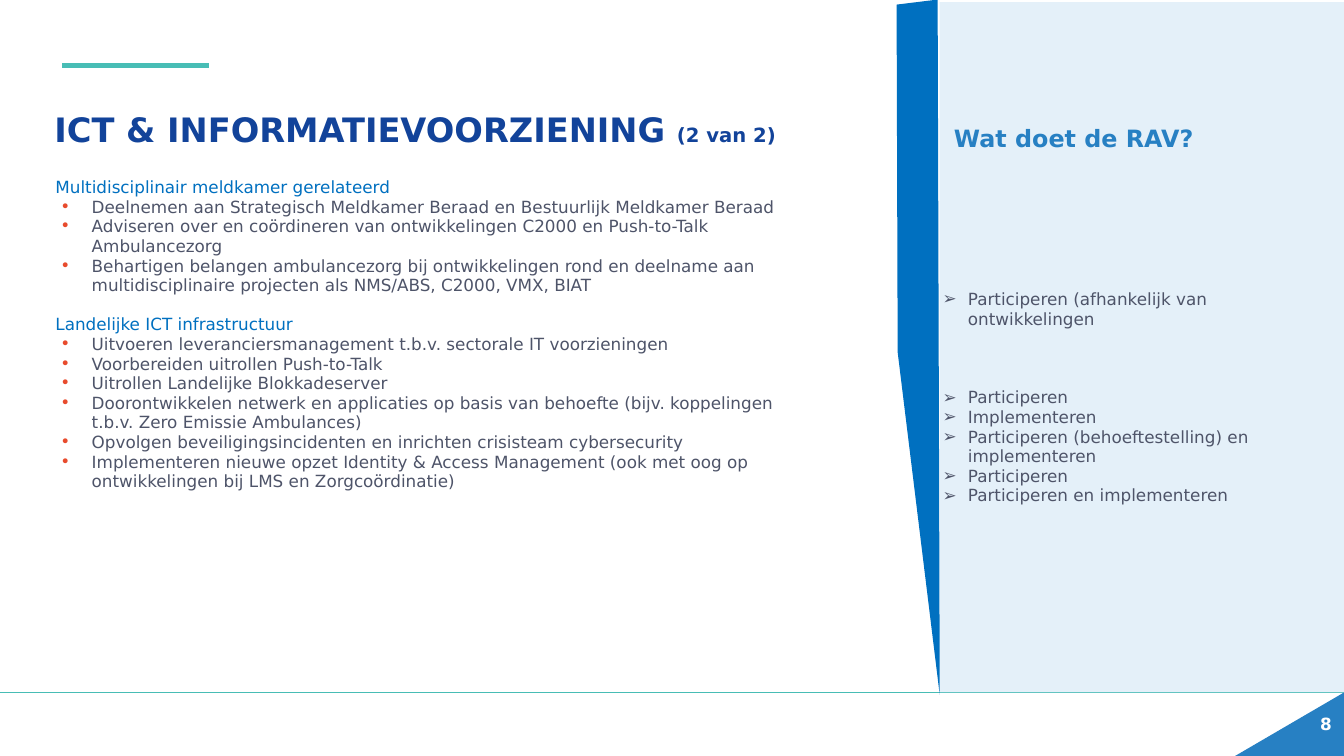
from lxml import etree
from pptx import Presentation
from pptx.dml.color import RGBColor
from pptx.enum.shapes import MSO_CONNECTOR, MSO_SHAPE
from pptx.enum.text import MSO_ANCHOR, MSO_AUTO_SIZE, PP_ALIGN
from pptx.oxml.ns import qn
from pptx.util import Inches, Pt

RECTANGLE = MSO_SHAPE.RECTANGLE
STRIPE = MSO_SHAPE.DIAGONAL_STRIPE
STRAIGHT = MSO_CONNECTOR.STRAIGHT
TOP, MIDDLE = MSO_ANCHOR.TOP, MSO_ANCHOR.MIDDLE
LEFT, RIGHT = PP_ALIGN.LEFT, PP_ALIGN.RIGHT
NO_FIT = MSO_AUTO_SIZE.NONE

NAVY = RGBColor(0x12, 0x43, 0x9A)
BLUE = RGBColor(0x27, 0x80, 0xC3)
STRONG_BLUE = RGBColor(0x00, 0x70, 0xC0)
PALE_BLUE = RGBColor(0xD1, 0xE6, 0xF6)
TEAL = RGBColor(0x48, 0xBD, 0xB5)
RED = RGBColor(0xE8, 0x4B, 0x2D)
SLATE = RGBColor(0x4E, 0x54, 0x69)
WHITE = RGBColor(0xFF, 0xFF, 0xFF)

FONT = "DejaVu Sans"
WIDTH, HEIGHT = 13.33, 7.5
FOOTER_TOP = 6.87
LINE = 14  # line pitch in points

SECTIONS = [
    ("Multidisciplinair meldkamer gerelateerd", [
        "Deelnemen aan Strategisch Meldkamer Beraad en Bestuurlijk Meldkamer Beraad",
        "Adviseren over en coördineren van ontwikkelingen C2000 en Push-to-Talk Ambulancezorg",
        "Behartigen belangen ambulancezorg bij ontwikkelingen rond en deelname aan "
        "multidisciplinaire projecten als NMS/ABS, C2000, VMX, BIAT",
    ]),
    ("Landelijke ICT infrastructuur", [
        "Uitvoeren leveranciersmanagement t.b.v. sectorale IT voorzieningen",
        "Voorbereiden uitrollen Push-to-Talk",
        "Uitrollen Landelijke Blokkadeserver",
        "Doorontwikkelen netwerk en applicaties op basis van behoefte "
        "(bijv. koppelingen t.b.v. Zero Emissie Ambulances)",
        "Opvolgen beveiligingsincidenten en inrichten crisisteam cybersecurity",
        "Implementeren nieuwe opzet Identity & Access Management "
        "(ook met oog op ontwikkelingen bij LMS en Zorgcoördinatie)",
    ]),
]

# Role of the RAV, with the empty lines above each item
ROLES = [
    ("Participeren (afhankelijk van ontwikkelingen", 7),
    ("Participeren", 3),
    ("Implementeren", 0),
    ("Participeren (behoeftestelling) en implementeren", 0),
    ("Participeren", 0),
    ("Participeren en implementeren", 0),
]


def style(span, size, color, bold=False):
    span.font.name = FONT
    span.font.size = Pt(size)
    span.font.bold = bold
    span.font.color.rgb = color


def paint(shape, color):
    shape.shadow.inherit = False
    shape.fill.solid()
    shape.fill.fore_color.rgb = color
    shape.line.fill.background()


def add_rule(page, left, top, length, weight):
    rule = page.shapes.add_connector(
        STRAIGHT, Inches(left), Inches(top), Inches(left + length), Inches(top))
    rule.line.color.rgb = TEAL
    rule.line.width = Pt(weight)
    etree.SubElement(rule.element.spPr, qn("a:effectLst"))


def place(shape, box, inset=(0, 0)):
    """Puts a text shape in its box, in front of what is already there."""
    shape.left, shape.top, shape.width, shape.height = map(Inches, box)
    shape.element.getparent().append(shape.element)
    frame = shape.text_frame
    frame.word_wrap = True
    frame.auto_size = NO_FIT
    frame.vertical_anchor = TOP
    frame.margin_left = frame.margin_right = Inches(inset[0])
    frame.margin_top = frame.margin_bottom = Inches(inset[1])
    return frame


def indent(para, margin, first=0.0, bullet=None, color=SLATE):
    properties = para._p.get_or_add_pPr()
    properties.set("marL", str(Inches(margin)))
    properties.set("indent", str(Inches(first)))
    if bullet is None:
        etree.SubElement(properties, qn("a:buNone"))
        return
    bullet_color = etree.SubElement(properties, qn("a:buClr"))
    etree.SubElement(bullet_color, qn("a:srgbClr"), val=str(color))
    etree.SubElement(properties, qn("a:buFont"), typeface=FONT)
    etree.SubElement(properties, qn("a:buChar"), char=bullet)


def write(para, text, size, color, bold=False, pitch=LINE, before=0):
    para.text = text
    para.alignment = LEFT
    para.line_spacing = Pt(pitch)
    para.space_before = Pt(before)
    para.space_after = Pt(0)
    style(para.runs[0], size, color, bold)


def add_footer(page, box, number):
    left, top, width, height = box
    right, bottom = left + width, top + height
    add_rule(page, left, top, width, 0.75)
    # Corner triangle
    outline = page.shapes.build_freeform(Inches(right), Inches(bottom))
    outline.add_line_segments([(Inches(right), Inches(top)),
                               (Inches(right - 1.08), Inches(bottom))], close=True)
    paint(outline.convert_to_shape(), BLUE)
    # Page number
    label = page.shapes.add_textbox(0, 0, 0, 0)
    frame = place(label, (right - 0.36, top + 0.21, 0.24, 0.2))
    frame.vertical_anchor = MIDDLE
    frame.text = number
    frame.paragraphs[0].alignment = RIGHT
    style(frame.paragraphs[0].runs[0], 12, WHITE, True)


def add_title(page, box):
    frame = place(page.shapes.title, box)
    para = frame.paragraphs[0]
    para.alignment = LEFT
    para.line_spacing = 0.9
    para.space_before = Pt(0)
    for text, size in [("ICT & INFORMATIEVOORZIENING ", 24), ("(2 van 2)", 14)]:
        span = para.add_run()
        span.text = text
        style(span, size, NAVY, True)


def add_sections(page, box):
    frame = place(page.placeholders[1], box)
    for index, (heading, items) in enumerate(SECTIONS):
        para = frame.add_paragraph() if index else frame.paragraphs[0]
        indent(para, 0.15)
        write(para, heading, 12, STRONG_BLUE, before=LINE if index else 0)
        for item in items:
            para = frame.add_paragraph()
            para.level = 1
            indent(para, 0.51, -0.31, "•", RED)
            write(para, item, 12, SLATE)


def add_roles_panel(page, box):
    left, top, width, height = box
    # Pale background
    panel = page.shapes.add_shape(RECTANGLE, *map(Inches, box))
    paint(panel, PALE_BLUE)
    tint = panel.element.spPr.find(qn("a:solidFill"))[0]
    etree.SubElement(tint, qn("a:alpha"), val="58000")
    # Folded edge
    edge = page.shapes.add_shape(
        STRIPE, Inches(left - 0.42), Inches(top), Inches(0.82), Inches(height))
    edge.rotation = 353
    paint(edge, STRONG_BLUE)
    # Heading and roles
    frame = place(page.placeholders[2], (left - 0.07, top + 1.22, width + 0.08, 3.86),
                  (0.1, 0.05))
    heading = frame.paragraphs[0]
    indent(heading, 0.11)
    write(heading, "Wat doet de RAV?", 17, BLUE, True, pitch=16)
    for role, empty_lines in ROLES:
        para = frame.add_paragraph()
        indent(para, 0.25, -0.25, "➢")
        write(para, role, 12, SLATE, before=empty_lines * LINE)


def main():
    deck = Presentation()
    deck.slide_width, deck.slide_height = Inches(WIDTH), Inches(HEIGHT)
    page = deck.slides.add_slide(deck.slide_layouts[3])
    add_footer(page, (0, FOOTER_TOP, WIDTH, HEIGHT - FOOTER_TOP), "8")
    add_rule(page, 0.62, 0.65, 1.45, 3.75)
    add_title(page, (0.54, 1.13, 7.88, 0.73))
    add_sections(page, (0.4, 1.76, 7.69, 4.82))
    add_roles_panel(page, (9.32, 0.02, WIDTH - 9.32, 6.85))
    deck.save("out.pptx")


if __name__ == "__main__":
    main()
